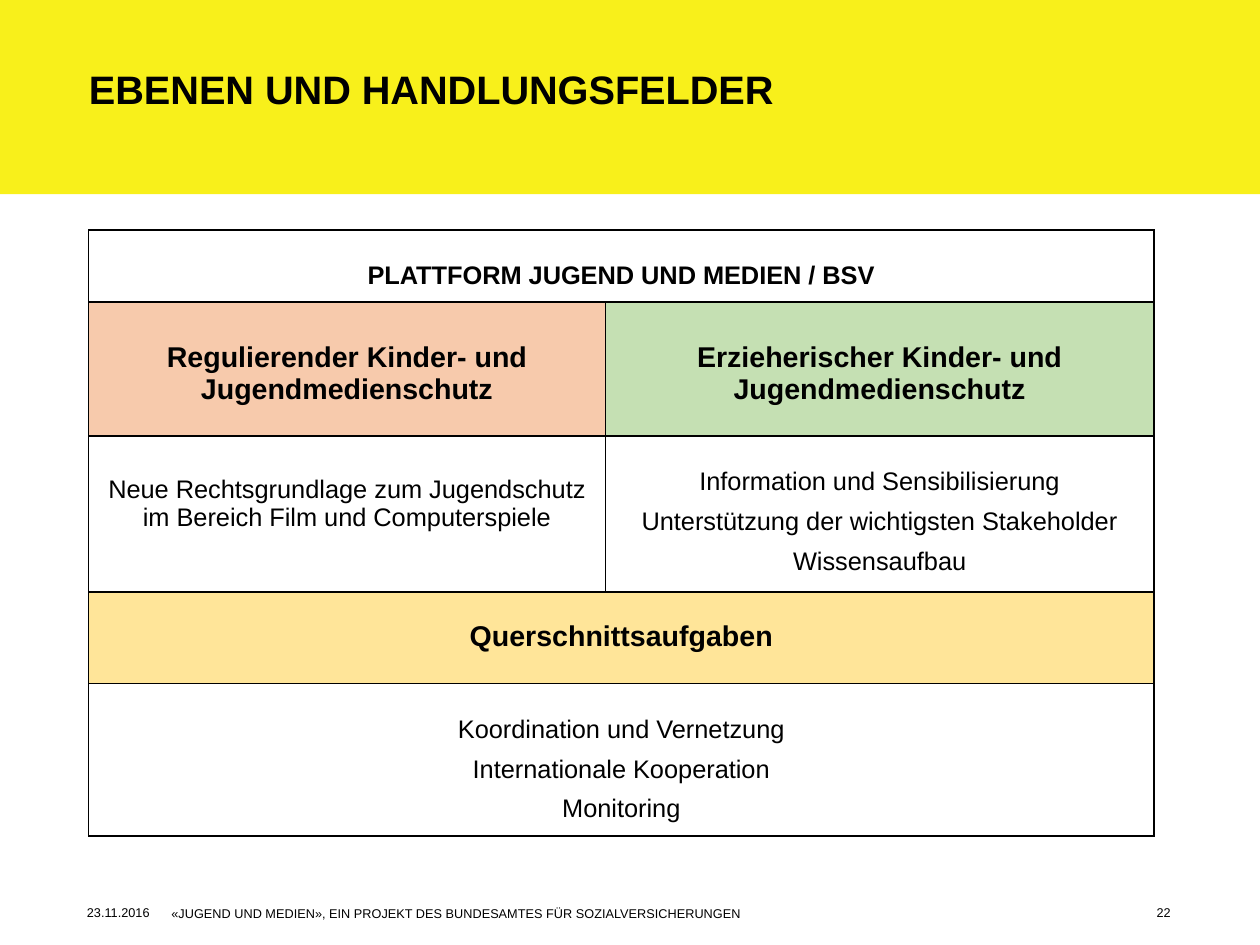
from pptx import Presentation
from pptx.dml.color import RGBColor
from pptx.enum.shapes import MSO_SHAPE
from pptx.enum.text import MSO_ANCHOR, MSO_AUTO_SIZE, PP_ALIGN
from pptx.oxml import parse_xml
from pptx.oxml.ns import nsdecls
from pptx.util import Pt

BLACK = RGBColor(0x00, 0x00, 0x00)
WHITE = RGBColor(0xFF, 0xFF, 0xFF)
YELLOW = RGBColor(0xF8, 0xF0, 0x1B)
PEACH = RGBColor(0xF7, 0xCA, 0xAC)
GREEN = RGBColor(0xC5, 0xE0, 0xB3)
AMBER = RGBColor(0xFF, 0xE5, 0x99)

WIDTH, HEIGHT = 793.7, 595.28
COLS = (325.4, 345.6)
ROWS = (45.4, 84.4, 98.3, 57.7, 96)

# Each cell: text lines, size, bold, exact line spacing, fill
CELLS = (
    ((("PLATTFORM JUGEND UND MEDIEN / BSV",), 16, True, 13, WHITE),),
    ((("Regulierender Kinder- und Jugendmedienschutz",), 18, True, None, PEACH),
     (("Erzieherischer Kinder- und Jugendmedienschutz",), 18, True, None, GREEN)),
    ((("Neue Rechtsgrundlage zum Jugendschutz im Bereich Film und Computerspiele",),
      16, False, None, WHITE),
     (("Information und Sensibilisierung", "Unterstützung der wichtigsten Stakeholder",
       "Wissensaufbau"), 16, False, 13, WHITE)),
    ((("Querschnittsaufgaben",), 18, True, 13, AMBER),),
    ((("Koordination und Vernetzung", "Internationale Kooperation", "Monitoring"),
      16, False, 13, WHITE),),
)


def write(frame, lines, size=8, bold=False, align=PP_ALIGN.LEFT, gap=0, pitch=None):
    frame.word_wrap = True
    for i, line in enumerate(lines):
        para = frame.paragraphs[0] if i == 0 else frame.add_paragraph()
        para.text = line
        para.alignment = align
        para.space_before = Pt(gap if i else 0)
        para.space_after = Pt(gap)
        if pitch:
            para.line_spacing = Pt(pitch)
        font = para.font
        font.name, font.size, font.bold = "Arial", Pt(size), bold
        font.color.rgb = BLACK


def inset(frame, left=0, top=0, right=0, bottom=0):
    frame.margin_left, frame.margin_top = Pt(left), Pt(top)
    frame.margin_right, frame.margin_bottom = Pt(right), Pt(bottom)


def header(slide, x, y, w, h):
    # Yellow band
    band = slide.shapes.add_shape(MSO_SHAPE.RECTANGLE, Pt(x), Pt(y), Pt(w), Pt(h))
    band.shadow.inherit = False
    band.fill.solid()
    band.fill.fore_color.rgb = YELLOW
    band.line.fill.background()

    # Title, brought in front of the band
    title = slide.shapes.title
    slide.shapes._spTree.append(title._element)
    title.left, title.top = Pt(x + 56), Pt(y + 41)
    title.width, title.height = Pt(680), Pt(63)
    frame = title.text_frame
    frame.auto_size = MSO_AUTO_SIZE.NONE
    frame.vertical_anchor = MSO_ANCHOR.TOP
    inset(frame)
    write(frame, ["EBENEN UND HANDLUNGSFELDER"], size=25, bold=True)


def outline(cell):
    props = cell._tc.get_or_add_tcPr()
    for i, side in enumerate(("lnL", "lnR", "lnT", "lnB")):
        props.insert(i, parse_xml(
            f'<a:{side} {nsdecls("a")} w="{Pt(1)}"><a:solidFill>'
            f'<a:srgbClr val="{BLACK}"/></a:solidFill></a:{side}>'))


def matrix(slide, x, y, w, h):
    table = slide.shapes.add_table(
        len(ROWS), len(COLS), Pt(x), Pt(y), Pt(w), Pt(h)).table
    table.first_row = table.horz_banding = False
    for col, width in zip(table.columns, COLS):
        col.width = Pt(width)
    for r, (height, items) in enumerate(zip(ROWS, CELLS)):
        table.rows[r].height = Pt(height)
        # A single entry spans the whole row
        if len(items) == 1:
            table.cell(r, 0).merge(table.cell(r, len(COLS) - 1))
        for c in range(len(COLS)):
            cell = table.cell(r, c)
            cell.fill.solid()
            cell.fill.fore_color.rgb = items[min(c, len(items) - 1)][-1]
            outline(cell)
        for c, (lines, size, bold, pitch, _) in enumerate(items):
            cell = table.cell(r, c)
            cell.vertical_anchor = MSO_ANCHOR.TOP
            inset(cell, left=5, top=25, right=5)
            write(cell.text_frame, lines, size=size, bold=bold,
                  align=PP_ALIGN.CENTER, gap=6, pitch=pitch)


def footer(slide, x, y, w, h):
    # Date, project and page number
    parts = (
        (0, 0, 48, "23.11.2016", PP_ALIGN.LEFT),
        (53.3, 0.7, 584, "«JUGEND UND MEDIEN», EIN PROJEKT DES BUNDESAMTES FÜR "
         "SOZIALVERSICHERUNGEN", PP_ALIGN.LEFT),
        (w - 25, 0, 25, "22", PP_ALIGN.RIGHT),
    )
    for left, top, width, text, align in parts:
        box = slide.shapes.add_textbox(Pt(x + left), Pt(y + top), Pt(width), Pt(h))
        inset(box.text_frame)
        write(box.text_frame, [text], align=align)


def main():
    deck = Presentation()
    deck.slide_width, deck.slide_height = Pt(WIDTH), Pt(HEIGHT)
    slide = deck.slides.add_slide(deck.slide_layouts[5])
    header(slide, 0, 0, WIDTH, 122.4)
    matrix(slide, 55.9, 144.8, sum(COLS), sum(ROWS))
    footer(slide, 54.7, 569.8, 682.8, 11)
    deck.save("out.pptx")


if __name__ == "__main__":
    main()
